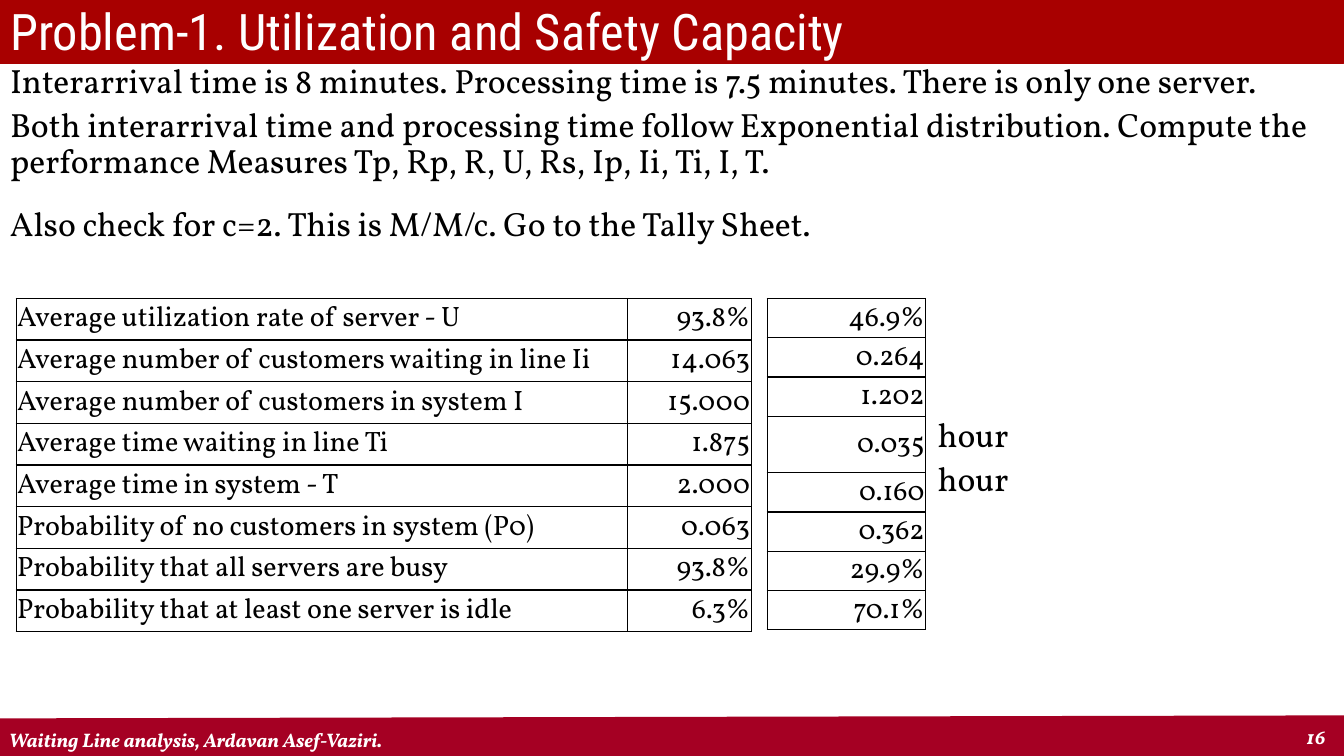
from lxml.etree import SubElement
from pptx import Presentation
from pptx.dml.color import RGBColor
from pptx.enum.shapes import MSO_CONNECTOR, MSO_SHAPE
from pptx.enum.text import MSO_ANCHOR, MSO_AUTO_SIZE, PP_ALIGN
from pptx.oxml.ns import qn
from pptx.util import Inches, Pt

TITLE = "Problem-1. Utilization and Safety Capacity"
PROBLEM = [
    "Interarrival time is 8 minutes. Processing time is 7.5 minutes. There is only one server.",
    "Both interarrival time and processing time follow Exponential distribution. "
    "Compute the performance Measures Tp, Rp, R, U, Rs, Ip, Ii, Ti, I, T.",
]
FOLLOW_UP = ["Also check for c=2. This is M/M/c. Go to the Tally Sheet."]
UNITS = ["hour", "hour"]
FOOTER = ["Waiting Line analysis, Ardavan Asef-Vaziri."]
PAGE = ["16"]
ONE_SERVER = [
    ("Average utilization rate of server - U", "93.8%"),
    ("Average number of customers waiting in line Ii", "14.063"),
    ("Average number of customers in system I", "15.000"),
    ("Average time waiting in line Ti", "1.875"),
    ("Average time in system - T", "2.000"),
    ("Probability of no customers in system (P0)", "0.063"),
    ("Probability that all servers are busy", "93.8%"),
    ("Probability that at least one server is idle", "6.3%"),
]
TWO_SERVERS = [(value,) for value in
               ("46.9%", "0.264", "1.202", "0.035", "0.160", "0.362", "29.9%", "70.1%")]

WIDTH, HEIGHT = 13.33, 7.5
BAR_HEIGHT = 0.6
PROBLEM_HEIGHT = 1.42
TABLE_TOP = 2.96
ONE_SERVER_ROWS = [3.31 / len(ONE_SERVER)] * len(ONE_SERVER)
TWO_SERVER_ROWS = [0.56 if row == 3 else 0.39 for row in range(len(TWO_SERVERS))]
BLACK, WHITE, BAR_RED, FOOTER_RED = "000000", "FFFFFF", "A80000", "A50023"
BODY = dict(after=6, spacing=0.88)
FOOT = dict(size=14, color=WHITE, bold=True, italic=True, anchor=MSO_ANCHOR.BOTTOM)


def rgb(value):
    return RGBColor.from_string(value)


def place(shape, left, top, width, height):
    shape.left, shape.top = Inches(left), Inches(top)
    shape.width, shape.height = Inches(width), Inches(height)


def write(frame, lines, size=24, font="Vollkorn", color=BLACK, bold=False, italic=False,
          align=PP_ALIGN.LEFT, anchor=MSO_ANCHOR.TOP, after=0, spacing=1.0):
    frame.word_wrap = True
    frame.vertical_anchor = anchor
    for index, line in enumerate(lines):
        paragraph = frame.paragraphs[0] if index == 0 else frame.add_paragraph()
        properties = paragraph._p.get_or_add_pPr()
        properties.set("marL", "0")
        properties.set("indent", "0")
        SubElement(properties, qn("a:buNone"))
        paragraph.alignment = align
        paragraph.space_before, paragraph.space_after = Pt(0), Pt(after)
        paragraph.line_spacing = spacing
        run = paragraph.add_run()
        run.text = line
        run.font.size, run.font.name = Pt(size), font
        run.font.bold, run.font.italic = bold, italic
        run.font.color.rgb = rgb(color)


def add_text(slide, lines, left, top, width, height, **style):
    box = slide.shapes.add_textbox(0, 0, 0, 0)
    place(box, left, top, width, height)
    write(box.text_frame, lines, **style)


def add_borders(cell, color=BLACK, points=1):
    properties = cell._tc.get_or_add_tcPr()
    for side in ("lnL", "lnR", "lnT", "lnB"):
        border = SubElement(properties, qn(f"a:{side}"), w=str(Pt(points)))
        SubElement(SubElement(border, qn("a:solidFill")), qn("a:srgbClr"), val=color)


def add_measures(slide, records, left, columns, rows, fill=None):
    """Add a bordered table whose last column holds right-aligned values."""
    table = slide.shapes.add_table(
        len(rows), len(columns), Inches(left), Inches(TABLE_TOP),
        Inches(sum(columns)), Inches(sum(rows))).table
    table.first_row = table.horz_banding = False
    for column, width in zip(table.columns, columns):
        column.width = Inches(width)
    for row, height, record in zip(table.rows, rows, records):
        row.height = Inches(height)
        for index, (cell, content) in enumerate(zip(row.cells, record)):
            is_value = index == len(columns) - 1
            cell.margin_left = cell.margin_right = cell.margin_top = Inches(0.01)
            cell.margin_bottom = 0
            write(cell.text_frame, [content], size=20,
                  align=PP_ALIGN.RIGHT if is_value else PP_ALIGN.LEFT)
            cell.vertical_anchor = MSO_ANCHOR.MIDDLE
            add_borders(cell)
            if fill:
                cell.fill.solid()
                cell.fill.fore_color.rgb = rgb(fill)
            else:
                cell.fill.background()


def add_bands(slide):
    """Add the red footer band and the red bar behind the title."""
    band = slide.shapes.add_connector(
        MSO_CONNECTOR.STRAIGHT, Inches(-0.01), Inches(7.33), Inches(13.36), Inches(7.3))
    band.line.color.rgb = rgb(FOOTER_RED)
    band.line.width = Pt(29.25)
    SubElement(band._element.spPr, qn("a:effectLst"))
    bar = slide.shapes.add_shape(MSO_SHAPE.RECTANGLE, 0, 0, 0, 0)
    place(bar, 0, -0.01, WIDTH, 0.64)
    bar.shadow.inherit = False
    bar.fill.solid()
    bar.fill.fore_color.rgb = bar.line.color.rgb = rgb(BAR_RED)
    bar.line.width = Pt(0.75)


def main():
    deck = Presentation()
    deck.slide_width, deck.slide_height = Inches(WIDTH), Inches(HEIGHT)
    slide = deck.slides.add_slide(deck.slide_layouts[1])
    title, problem = slide.shapes.title, slide.placeholders[1]

    add_bands(slide)
    add_text(slide, FOOTER, -0.01, 7.16, 10.85, 0.34, **FOOT)
    add_text(slide, PAGE, 12.86, 7.13, 0.47, 0.34, **FOOT)

    for placeholder in (title, problem):
        slide.shapes._spTree.append(placeholder._element)  # bring in front of the bands
        placeholder.text_frame.auto_size = MSO_AUTO_SIZE.NONE
    place(title, 0, 0, WIDTH, BAR_HEIGHT)
    write(title.text_frame, [TITLE], size=36, font="Roboto Condensed", color=WHITE,
          anchor=MSO_ANCHOR.MIDDLE)
    place(problem, 0, BAR_HEIGHT, WIDTH, PROBLEM_HEIGHT)
    write(problem.text_frame, PROBLEM, **BODY)
    add_text(slide, FOLLOW_UP, 0, BAR_HEIGHT + PROBLEM_HEIGHT, 8.71, 0.51, **BODY)

    add_measures(slide, ONE_SERVER, 0.16, [6.06, 1.23], ONE_SERVER_ROWS)
    add_measures(slide, TWO_SERVERS, 7.61, [1.57], TWO_SERVER_ROWS, fill=WHITE)
    add_text(slide, UNITS, 9.2, 4.11, 1.09, 1.02, **BODY)
    deck.save("out.pptx")


if __name__ == "__main__":
    main()
